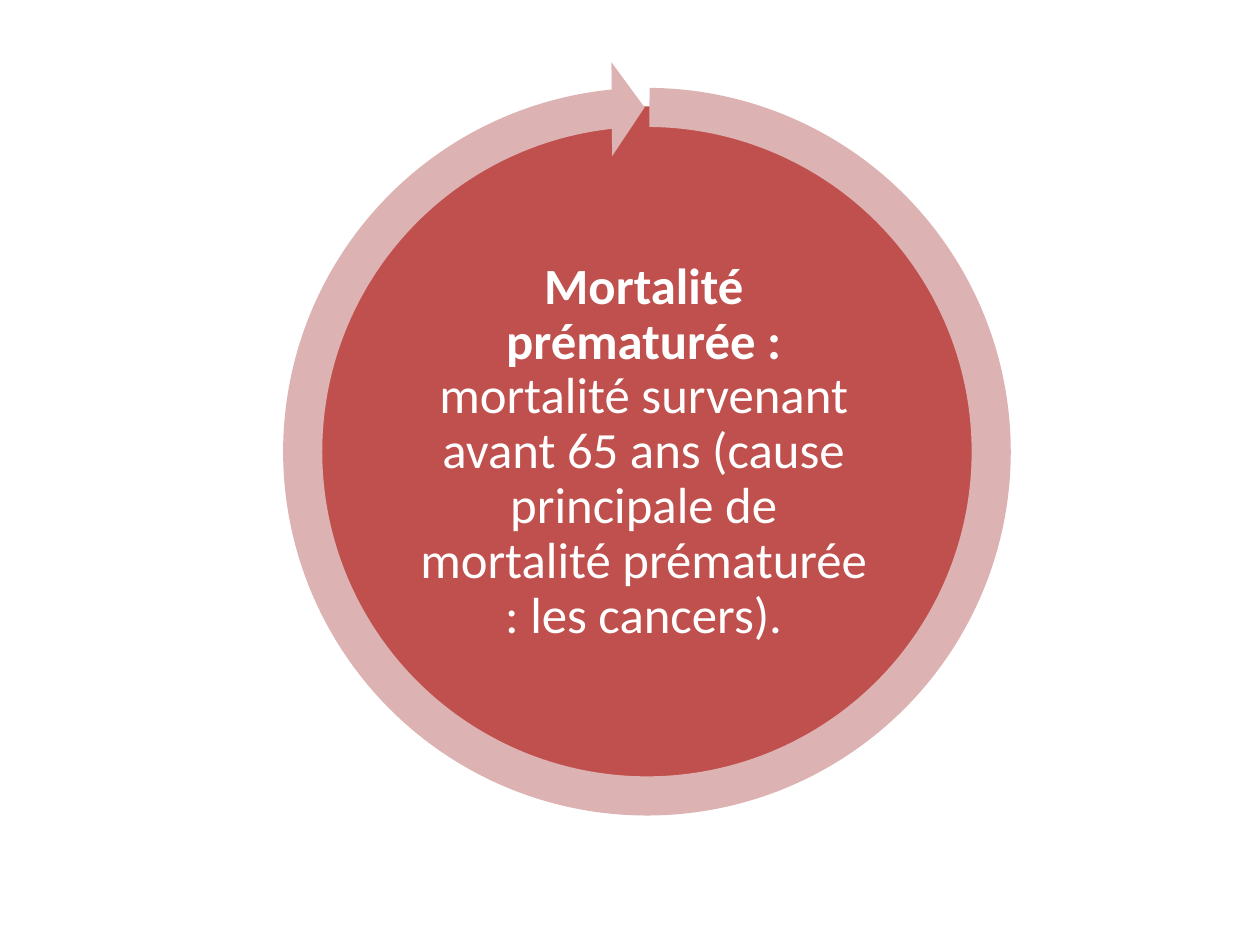
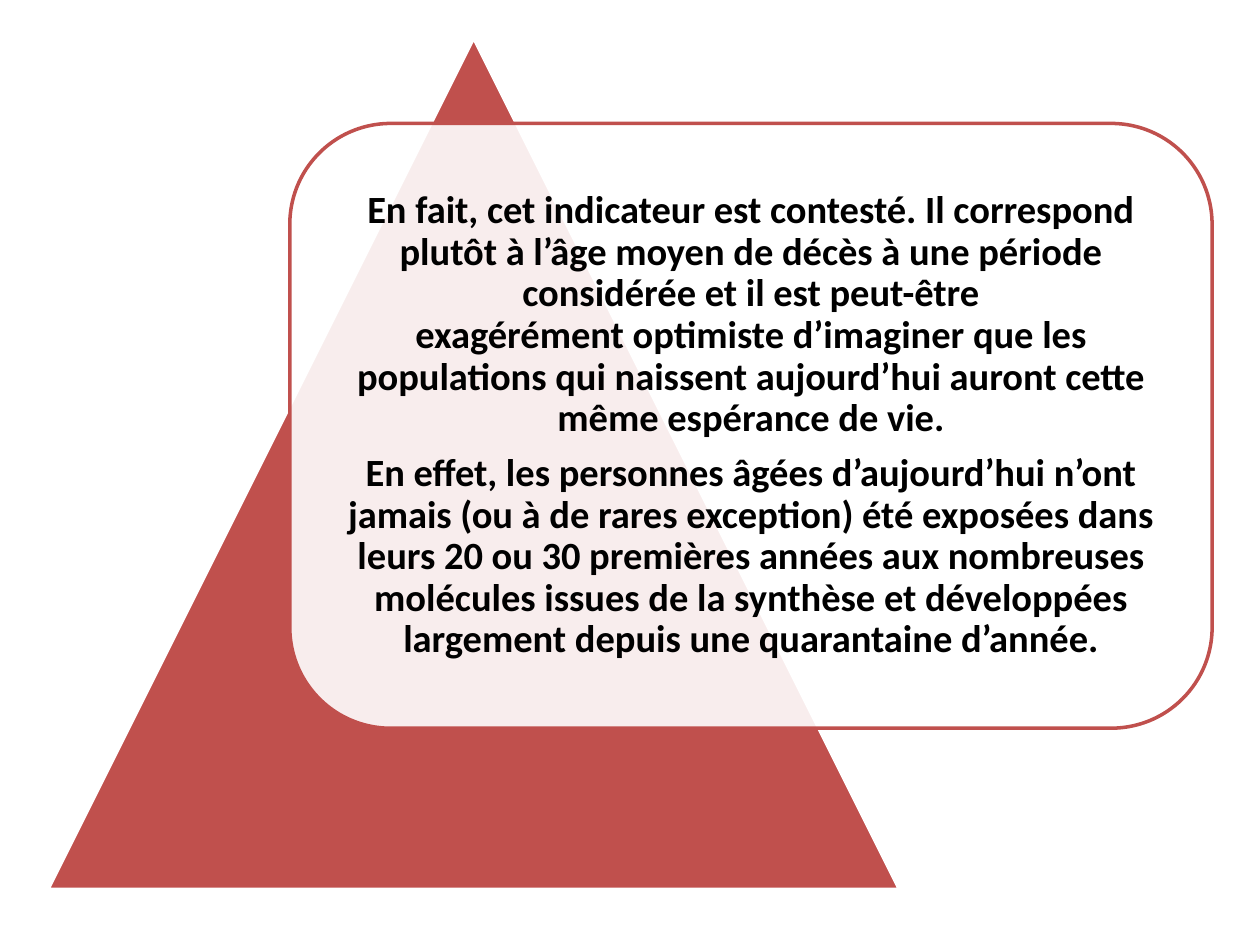
from dataclasses import dataclass

from lxml import etree
from pptx import Presentation
from pptx.dml.color import RGBColor
from pptx.enum.shapes import MSO_SHAPE
from pptx.enum.text import MSO_ANCHOR, PP_ALIGN
from pptx.oxml.ns import qn
from pptx.util import Inches, Pt

ELLIPSE = MSO_SHAPE.OVAL
TRIANGLE = MSO_SHAPE.ISOSCELES_TRIANGLE
ROUNDED_RECTANGLE = MSO_SHAPE.ROUNDED_RECTANGLE
CIRCULAR_ARROW = MSO_SHAPE.CIRCULAR_ARROW
BLANK_LAYOUT = 6


@dataclass(frozen=True)
class Theme:
    red: RGBColor = RGBColor(0xC0, 0x50, 0x4D)
    pink: RGBColor = RGBColor(0xDC, 0xB3, 0xB2)
    white: RGBColor = RGBColor(0xFF, 0xFF, 0xFF)
    black: RGBColor = RGBColor(0x00, 0x00, 0x00)
    font: str = "Calibri"
    definition_size: float = 29
    comment_size: float = 22
    line_width: float = 2
    line_spacing: float = 0.9
    space_after: float = 0.35  # share of the type size


@dataclass(frozen=True)
class Box:
    left: float
    top: float
    width: float
    height: float

    def lengths(self):
        return [Inches(value) for value in (self.left, self.top, self.width, self.height)]

    def inset(self, margin: float) -> "Box":
        return Box(self.left + margin, self.top + margin,
                   self.width - 2 * margin, self.height - 2 * margin)


@dataclass(frozen=True)
class Line:
    """Text up to a forced line break or the end of its paragraph."""
    text: str
    bold: bool = True


THEME = Theme()

DEFINITION = [[
    Line("Mortalité prématurée :"),
    Line("mortalité survenant avant 65 ans (cause principale de mortalité "
         "prématurée : les cancers).", bold=False),
]]

COMMENT = [
    [
        Line("En fait, cet indicateur est contesté. Il correspond plutôt à l’âge moyen "
             "de décès à une période considérée et il est peut-être"),
        Line("exagérément optimiste d’imaginer que les populations qui naissent "
             "aujourd’hui auront cette même espérance de vie."),
    ],
    [
        Line("En effet, les personnes âgées d’aujourd’hui n’ont jamais (ou à de rares "
             "exception) été exposées dans leurs 20 ou 30 premières années aux nombreuses "
             "molécules issues de la synthèse et développées largement depuis une "
             "quarantaine d’année."),
    ],
]


def add_figure(slide, kind, box: Box, fill: RGBColor, line: RGBColor | None = None,
               opacity: int = 100):
    """Draw a preset shape; opacity is a percentage of the fill."""
    shape = slide.shapes.add_shape(kind, *box.lengths())
    shape.shadow.inherit = False
    shape.fill.solid()
    shape.fill.fore_color.rgb = fill
    if opacity < 100:
        color = shape.fill._xPr.find(f".//{qn('a:srgbClr')}")
        etree.SubElement(color, qn("a:alpha")).set("val", str(opacity * 1000))
    if line is None:
        shape.line.fill.background()
    else:
        shape.line.color.rgb = line
        shape.line.width = Pt(THEME.line_width)
    return shape


def add_text(slide, box: Box, paragraphs: list[list[Line]], *, size: float,
             color: RGBColor, margin: float):
    """Add centred text in a box, one line break between lines of a paragraph."""
    frame = slide.shapes.add_textbox(*box.lengths()).text_frame
    frame.word_wrap = True
    frame.vertical_anchor = MSO_ANCHOR.MIDDLE
    frame.margin_left = frame.margin_right = Inches(margin)
    frame.margin_top = frame.margin_bottom = Inches(margin)
    for index, lines in enumerate(paragraphs):
        paragraph = frame.add_paragraph() if index else frame.paragraphs[0]
        paragraph.alignment = PP_ALIGN.CENTER
        paragraph.line_spacing = THEME.line_spacing
        paragraph.space_after = Pt(size * THEME.space_after)
        paragraph.font.size = Pt(size)
        for position, line in enumerate(lines):
            if position:
                paragraph.add_line_break()
            run = paragraph.add_run()
            run.text = line.text
            run.font.name = THEME.font
            run.font.size = Pt(size)
            run.font.bold = line.bold
            run.font.color.rgb = color


def build_definition(slide):
    # Disc, its text and the arrow around it
    disc = Box(2.35, 0.83, 5.52, 5.52)
    add_figure(slide, ELLIPSE, disc, THEME.red, THEME.white)
    add_text(slide, disc.inset(0.92), DEFINITION, size=THEME.definition_size,
             color=THEME.white, margin=0.04)
    arrow = add_figure(slide, CIRCULAR_ARROW, Box(2.03, 0.48, 6.21, 6.21), THEME.pink)
    # Band width, head angle, end angle, start angle, head width
    for index, value in enumerate((0.05, 3.28, 158.48, 162.25, 0.06)):
        arrow.adjustments[index] = value


def build_comment(slide):
    # Triangle behind a translucent card
    card = Box(2.3, 0.98, 7.32, 4.8)
    add_figure(slide, TRIANGLE, Box(0.38, 0.3, 6.76, 6.76), THEME.red, THEME.white)
    add_figure(slide, ROUNDED_RECTANGLE, card, THEME.white, THEME.red, opacity=90)
    add_text(slide, card.inset(0.23), COMMENT, size=THEME.comment_size,
             color=THEME.black, margin=0.09)


def main():
    presentation = Presentation()
    presentation.slide_width = Inches(10)
    presentation.slide_height = Inches(7.5)
    for build in (build_definition, build_comment):
        build(presentation.slides.add_slide(presentation.slide_layouts[BLANK_LAYOUT]))
    presentation.save("out.pptx")


if __name__ == "__main__":
    main()
